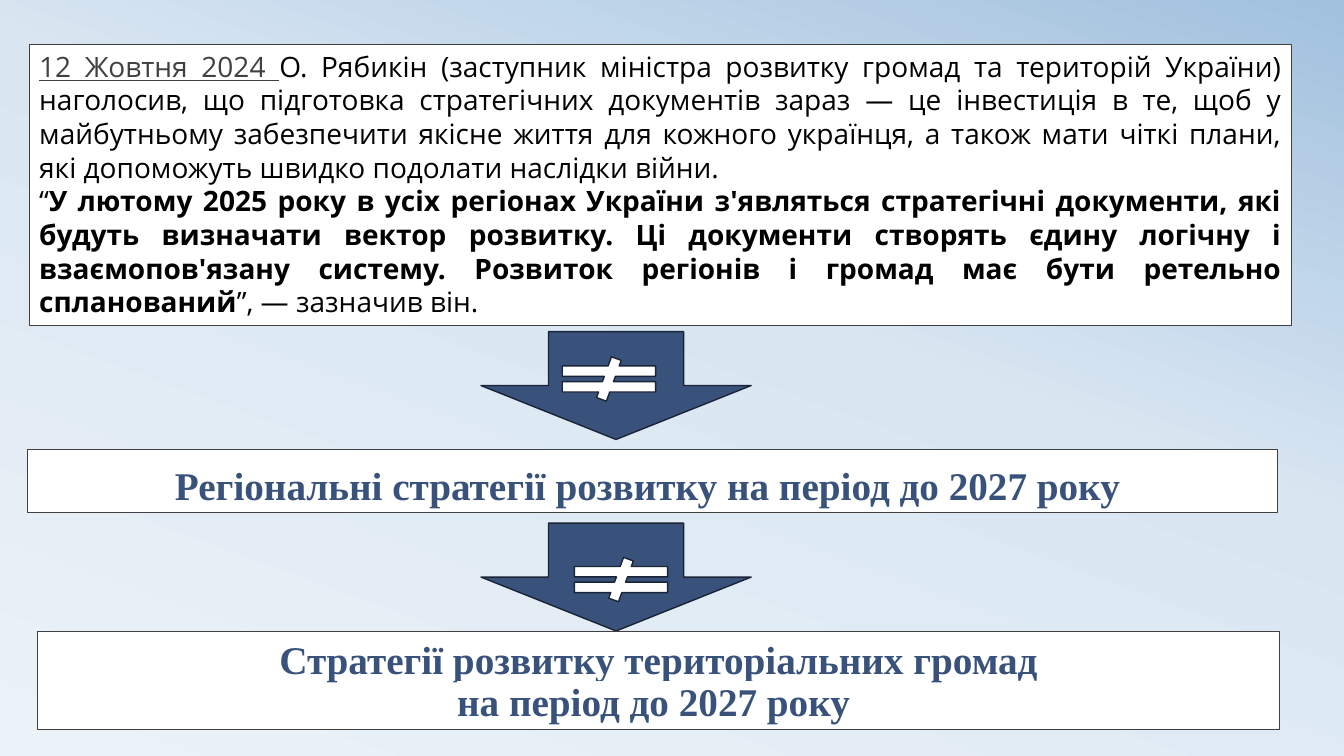
from copy import deepcopy

from lxml.etree import SubElement
from pptx import Presentation
from pptx.dml.color import RGBColor
from pptx.enum.shapes import MSO_SHAPE
from pptx.enum.text import MSO_ANCHOR, MSO_AUTO_SIZE, PP_ALIGN
from pptx.oxml.ns import qn
from pptx.util import Pt

PX = 9144  # 100 px to the inch
COLORS = {
    "white": "FFFFFF", "black": "000000", "border": "404040",
    "navy": "39527B", "outline": "192436",
    "pale": "ECF3F8", "mist": "D9E6F2", "sky": "A1C1DE",
}


def color(name):
    return RGBColor.from_string(COLORS[name])


def add_text(paragraph, text, font="Open Sans", size=20, ink="black",
             bold=False, underline=False, highlight=None):
    """Add text to a paragraph, breaking the line at each newline."""
    for index, line in enumerate(text.split("\n")):
        if index:
            paragraph.add_line_break()
        run = paragraph.add_run()
        run.text = line
        run.font.name, run.font.size = font, Pt(size)
        run.font.bold, run.font.underline = bold, underline
        run.font.color.rgb = color(ink)
        if highlight:
            properties = run.font._element
            mark = SubElement(properties, qn("a:highlight"))
            SubElement(mark, qn("a:srgbClr"), val=COLORS[highlight])
            properties.find(qn("a:solidFill")).addnext(mark)


class SlideBuilder:
    def __init__(self, presentation):
        self.slide = presentation.slides.add_slide(presentation.slide_layouts[6])

    def background(self, stops, angle):
        fill = self.slide.background.fill
        fill.gradient()
        fill.gradient_angle = angle
        stop_list = self.slide.element.find(".//" + qn("a:gsLst"))
        while len(stop_list) < len(stops):
            stop_list.append(deepcopy(stop_list[-1]))
        for stop, (position, name) in zip(fill.gradient_stops, stops):
            stop.position = position
            stop.color.rgb = color(name)

    def shape(self, kind, box, fill, line, width):
        shape = self.slide.shapes.add_shape(kind, *(value * PX for value in box))
        shape.shadow.inherit = False
        shape.fill.solid()
        shape.fill.fore_color.rgb = color(fill)
        shape.line.color.rgb = color(line)
        shape.line.width = Pt(width)
        return shape

    def panel(self, box, anchor):
        shape = self.shape(MSO_SHAPE.RECTANGLE, box, "white", "border", 0.75)
        frame = shape.text_frame
        frame.word_wrap = True
        frame.vertical_anchor = anchor
        return frame

    def quote(self, box, paragraphs):
        frame = self.panel(box, MSO_ANCHOR.TOP)
        frame.auto_size = MSO_AUTO_SIZE.SHAPE_TO_FIT_TEXT
        for index, runs in enumerate(paragraphs):
            paragraph = frame.add_paragraph() if index else frame.paragraphs[0]
            paragraph.alignment = PP_ALIGN.JUSTIFY
            for text, style in runs:
                add_text(paragraph, text, **style)

    def title(self, box, text, spacing=1.0):
        paragraph = self.panel(box, MSO_ANCHOR.BOTTOM).paragraphs[0]
        paragraph.alignment = PP_ALIGN.CENTER
        paragraph.line_spacing = spacing
        add_text(paragraph, text, font="Times New Roman", size=28, ink="navy",
                 bold=True, highlight="white")

    def unequal_arrow(self, top, sign_left, sign_top):
        self.shape(MSO_SHAPE.DOWN_ARROW, (477, top, 268, 107), "navy", "outline", 1)
        self.shape(MSO_SHAPE.MATH_NOT_EQUAL, (sign_left, sign_top, 126, 44),
                   "white", "outline", 1)


QUOTE = [
    [
        ("12 Жовтня 2024 ", {"ink": "border", "underline": True}),
        ("О. Рябикін (заступник міністра розвитку громад та територій України) "
         "наголосив, що підготовка стратегічних документів зараз — це інвестиція "
         "в те, щоб у майбутньому забезпечити якісне життя для кожного українця, "
         "а також мати чіткі плани, які допоможуть швидко подолати наслідки війни.",
         {}),
    ],
    [
        ("“", {}),
        ("У лютому 2025 року в усіх регіонах України з'являться стратегічні "
         "документи, які будуть визначати вектор розвитку. Ці документи створять "
         "єдину логічну і взаємопов'язану систему. Розвиток регіонів і громад "
         "має бути ретельно спланований", {"bold": True}),
        ("”, — зазначив він. ", {}),
    ],
]


def main():
    presentation = Presentation()
    presentation.slide_width, presentation.slide_height = 1333 * PX, 750 * PX
    builder = SlideBuilder(presentation)
    builder.background([(0, "pale"), (0.58, "mist"), (1, "sky")], angle=70)

    # Statement
    builder.quote((29, 44, 1252, 279), QUOTE)

    # Regional strategies
    builder.title((27, 446, 1240, 63),
                  "Регіональні стратегії розвитку на період до 2027 року ")

    # Arrows between the levels
    builder.unequal_arrow(329, sign_left=541, sign_top=354)
    builder.unequal_arrow(519, sign_left=553, sign_top=553)

    # Community strategies
    builder.title((37, 627, 1232, 97),
                  "Стратегії розвитку територіальних громад\nна період до 2027 року ",
                  spacing=0.9)

    presentation.save("out.pptx")


if __name__ == "__main__":
    main()
